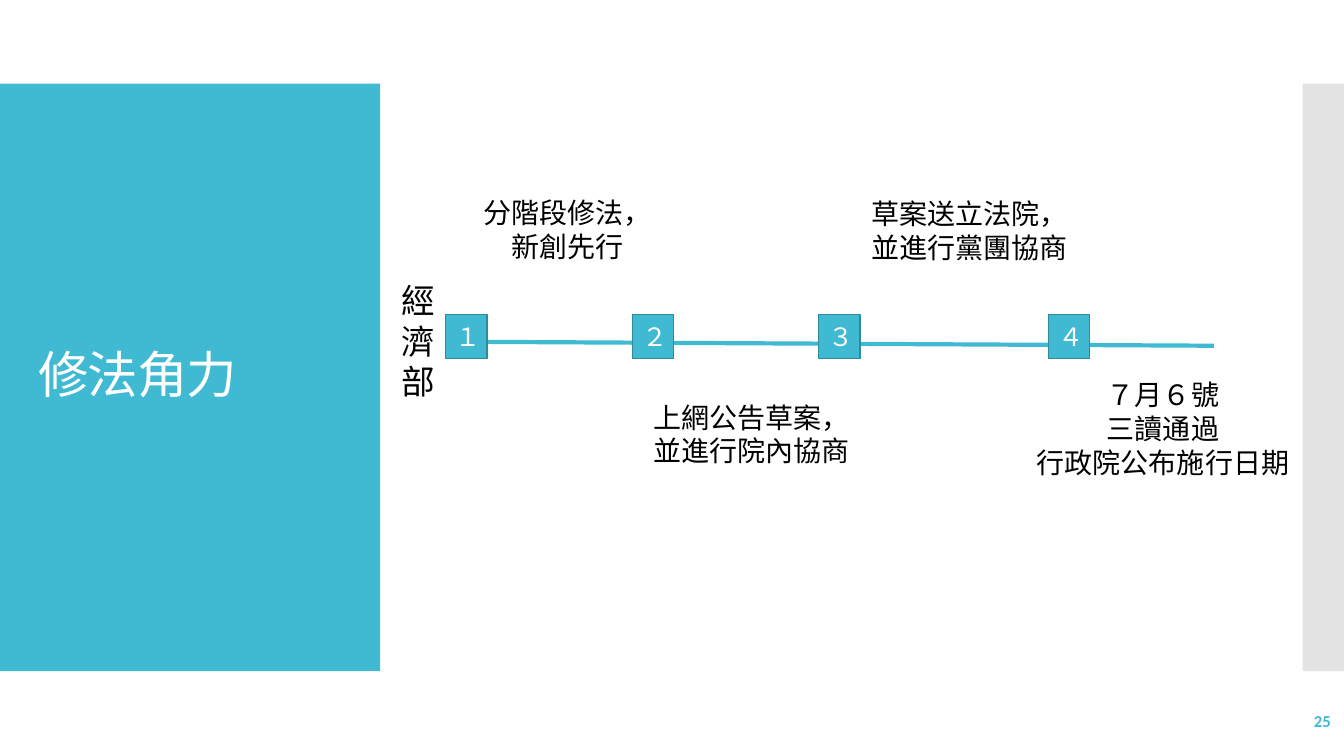
from lxml import etree
from pptx import Presentation
from pptx.dml.color import RGBColor
from pptx.enum.shapes import MSO_CONNECTOR, MSO_SHAPE
from pptx.enum.text import MSO_ANCHOR, MSO_AUTO_SIZE, PP_ALIGN
from pptx.oxml.ns import qn
from pptx.util import Inches, Pt

RECT, STRAIGHT = MSO_SHAPE.RECTANGLE, MSO_CONNECTOR.STRAIGHT
MIDDLE, TOP = MSO_ANCHOR.MIDDLE, MSO_ANCHOR.TOP
LEFT, CENTER, RIGHT = PP_ALIGN.LEFT, PP_ALIGN.CENTER, PP_ALIGN.RIGHT
NO_FIT = MSO_AUTO_SIZE.NONE

FONT = "Calibri"
COLORS = {"teal": "40BAD2", "edge": "2F8A9B", "grey": "C8C8C8",
          "white": "FFFFFF", "black": "000000"}

MARKER_SIZE = (0.41, 0.44)
MARKERS = [("１", 0.54), ("２", 2.39), ("３", 4.24), ("４", 6.52)]
# Captions: offset and size within the timeline box, wrap, lines
CAPTIONS = [
    ((0.81, 0, 1.88, 0.77), ["分階段修法，", "新創先行"]),
    ((2.49, 2.03, 2.17, 0.77), ["上網公告草案，", "並進行院內協商"]),
    ((4.65, 0.01, 2.17, 0.77), ["草案送立法院，", "並進行黨團協商"]),
    ((6.03, 1.81, 3.25, 1.11), ["７月６號", "三讀通過", "行政院公布施行日期"]),
]


def color(name):
    return RGBColor.from_string(COLORS[name])


def inches(*lengths):
    return [Inches(length) for length in lengths]


def write(shape, lines, size, ink, align=CENTER, anchor=TOP, wrap=True, bold=False):
    """Fill a shape with one paragraph per line, all in one style."""
    tf = shape.text_frame
    tf.text = "\n".join(lines)
    tf.auto_size = NO_FIT
    tf.word_wrap = wrap
    tf.vertical_anchor = anchor
    for p in tf.paragraphs:
        p.alignment = align
        p.font.name = FONT
        p.font.size = Pt(size)
        p.font.bold = bold
        p.font.color.rgb = color(ink)


def add_rect(s, box, fill, edge=None):
    sp = s.shapes.add_shape(RECT, *inches(*box))
    sp.shadow.inherit = False
    sp.fill.solid()
    sp.fill.fore_color.rgb = color(fill)
    if edge:
        sp.line.color.rgb = color(edge)
        sp.line.width = Pt(0.85)
    else:
        sp.line.fill.background()
    return sp


def add_text(s, box, lines, size, ink, **style):
    write(s.shapes.add_textbox(*inches(*box)), lines, size, ink, **style)


def add_side_strip(s, box):
    strip = add_rect(s, box, "grey")
    fill_color = strip.element.spPr.find(qn("a:solidFill"))[0]
    etree.SubElement(fill_color, qn("a:alpha")).set("val", "50000")


def add_title_panel(s, box, text):
    x, y, w, h = box
    add_rect(s, box, "teal")
    title = s.shapes.title
    title.left, title.top, title.width, title.height = inches(
        x + 0.28, y + 0.4, w - 0.55, h - 0.8)
    write(title, [text], 36, "white", align=LEFT, anchor=MIDDLE)
    p = title.text_frame.paragraphs[0]
    p.line_spacing = 0.9
    p.runs[0].font._element.set("spc", "-60")
    title.element.getparent().append(title.element)  # in front of the panel


def add_timeline(s, box):
    x, y, w, h = box
    axis = s.shapes.add_connector(
        STRAIGHT, *inches(x + 0.59, y + 1.5, x + 8.16, y + 1.54))
    axis.line.color.rgb = color("teal")
    axis.line.width = Pt(3)
    etree.SubElement(axis.element.spPr, qn("a:effectLst"))

    for number, dx in MARKERS:
        marker = add_rect(s, (x + dx, y + 1.23, *MARKER_SIZE), "teal", "edge")
        write(marker, [number], 18, "white", anchor=MIDDLE)

    # The narrow box stacks the characters one to a line
    add_text(s, (x, y + 0.84, 0.39, 1.31), ["經濟部"], 24, "black", align=LEFT)
    for (dx, dy, cw, ch), lines in CAPTIONS:
        add_text(s, (x + dx, y + dy, cw, ch), lines, 20, "black", wrap=False)


def add_page_number(s, box, number):
    add_text(s, box, [number], 12, "teal", align=RIGHT, anchor=MIDDLE, bold=True)


def main():
    prs = Presentation()
    prs.slide_width, prs.slide_height = inches(13.33, 7.5)
    s = prs.slides.add_slide(prs.slide_layouts[5])
    add_side_strip(s, (12.92, 0.83, 0.41, 5.83))
    add_title_panel(s, (0, 0.83, 3.77, 5.83), "修法角力")
    add_timeline(s, (3.88, 1.89, 9.28, 2.92))
    add_page_number(s, (11.63, 6.95, 1.67, 0.4), "25")
    prs.save("out.pptx")


if __name__ == "__main__":
    main()
